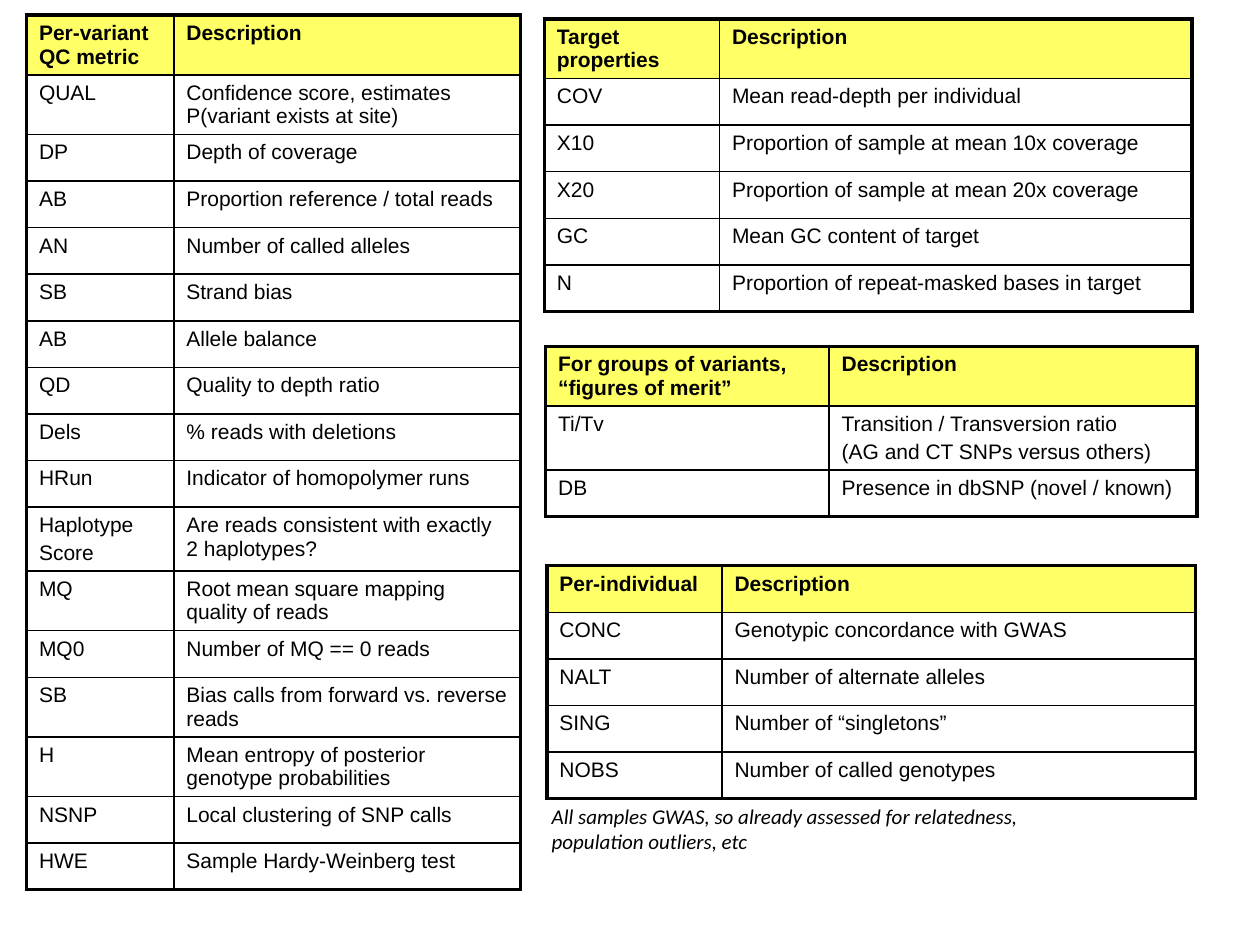
from dataclasses import dataclass

import pptx
import pptx.dml.color
import pptx.enum.text
import pptx.oxml.ns
import pptx.util
from lxml import etree

PX = 9144  # EMU per px, 100 px to the inch
ROW_HEIGHT = 37


@dataclass(frozen=True)
class Theme:
    ink: str = "000000"
    header_fill: str = "FFFF66"
    table_font: str = "Arial"
    note_font: str = "Calibri"
    size: float = 12
    paragraph_gap: float = 2.4
    outer_line: float = 2.25
    inner_line: float = 1


def write_text(frame, text, *, font, size, color, bold=False, italic=False, gap=0):
    """Write one paragraph per line of text, with a gap between paragraphs."""
    for index, line in enumerate(text.split("\n")):
        paragraph = frame.add_paragraph() if index else frame.paragraphs[0]
        paragraph.alignment = pptx.enum.text.PP_ALIGN.LEFT
        paragraph.space_before = pptx.util.Pt(gap if index else 0)
        run = paragraph.add_run()
        run.text = line
        run.font.name = font
        run.font.size = pptx.util.Pt(size)
        run.font.bold = bold
        run.font.italic = italic
        run.font.color.rgb = pptx.dml.color.RGBColor.from_string(color)


def set_border(cell, side, width, color):
    properties = cell._tc.get_or_add_tcPr()
    qn = pptx.oxml.ns.qn
    line = etree.SubElement(properties, qn(f"a:ln{side}"), w=str(pptx.util.Pt(width)))
    fill = etree.SubElement(line, qn("a:solidFill"))
    etree.SubElement(fill, qn("a:srgbClr"), val=color)


class SlideBuilder:
    def __init__(self, slide, theme):
        self.slide = slide
        self.theme = theme

    def table(self, left, top, column_widths, rows):
        """Add a two-column table whose first row is the header."""
        box = (left, top, sum(column_widths), ROW_HEIGHT * len(rows))
        shape = self.slide.shapes.add_table(
            len(rows), len(column_widths), *(value * PX for value in box))
        table = shape.table
        table.horz_banding = False
        for column, width in zip(table.columns, column_widths):
            column.width = width * PX
        for row in table.rows:
            row.height = ROW_HEIGHT * PX
        last_row, last_column = len(rows) - 1, len(column_widths) - 1
        for r, row in enumerate(rows):
            for c, text in enumerate(row):
                outer = {"L": c == 0, "R": c == last_column,
                         "T": r == 0, "B": r == last_row}
                self.cell(table.cell(r, c), text, outer, header=r == 0)

    def cell(self, cell, text, outer, header):
        theme = self.theme
        for side, is_outer in outer.items():
            width = theme.outer_line if is_outer else theme.inner_line
            set_border(cell, side, width, theme.ink)
        if header:
            cell.fill.solid()
            cell.fill.fore_color.rgb = pptx.dml.color.RGBColor.from_string(theme.header_fill)
        else:
            cell.fill.background()
        write_text(cell.text_frame, text, font=theme.table_font, size=theme.size,
                   color=theme.ink, bold=header, gap=theme.paragraph_gap)

    def note(self, left, top, width, height, text):
        box = (left, top, width, height)
        shape = self.slide.shapes.add_textbox(*(value * PX for value in box))
        frame = shape.text_frame
        frame.word_wrap = True
        frame.auto_size = pptx.enum.text.MSO_AUTO_SIZE.SHAPE_TO_FIT_TEXT
        write_text(frame, text, font=self.theme.note_font, size=self.theme.size,
                   color=self.theme.ink, italic=True)


VARIANT_METRICS = [
    ("Per-variant QC metric", "Description"),
    ("QUAL", "Confidence score, estimates P(variant exists at site)"),
    ("DP", "Depth of coverage"),
    ("AB", "Proportion reference / total reads"),
    ("AN", "Number of called alleles"),
    ("SB", "Strand bias"),
    ("AB", "Allele balance"),
    ("QD", "Quality to depth ratio"),
    ("Dels", "% reads with deletions"),
    ("HRun", "Indicator of homopolymer runs"),
    ("Haplotype\nScore", "Are reads consistent with exactly 2 haplotypes?"),
    ("MQ", "Root mean square mapping quality of reads"),
    ("MQ0", "Number of MQ == 0 reads"),
    ("SB", "Bias calls from forward vs. reverse reads"),
    ("H", "Mean entropy of posterior genotype probabilities"),
    ("NSNP", "Local clustering of SNP calls"),
    ("HWE", "Sample Hardy-Weinberg test"),
]
TARGET_PROPERTIES = [
    ("Target properties", "Description"),
    ("COV", "Mean read-depth per individual"),
    ("X10", "Proportion of sample at mean 10x coverage"),
    ("X20", "Proportion of sample at mean 20x coverage"),
    ("GC", "Mean GC content of target"),
    ("N", "Proportion of repeat-masked bases in target"),
]
INDIVIDUAL_METRICS = [
    ("Per-individual", "Description"),
    ("CONC", "Genotypic concordance with GWAS"),
    ("NALT", "Number of alternate alleles"),
    ("SING", "Number of “singletons”"),
    ("NOBS", "Number of called genotypes"),
]
GROUP_METRICS = [
    ("For groups of variants, “figures of merit”", "Description"),
    ("Ti/Tv", "Transition / Transversion ratio\n(AG and CT SNPs versus others)"),
    ("DB", "Presence in dbSNP (novel / known)"),
]


def main():
    presentation = pptx.Presentation()
    presentation.slide_width = 1000 * PX
    presentation.slide_height = 750 * PX
    blank_layout = presentation.slide_layouts[6]
    builder = SlideBuilder(presentation.slides.add_slide(blank_layout), Theme())
    builder.table(21, 12, (117, 275), VARIANT_METRICS)
    builder.table(432, 15, (139, 375), TARGET_PROPERTIES)
    builder.table(434, 449, (139, 376), INDIVIDUAL_METRICS)
    builder.table(433, 275, (225, 292), GROUP_METRICS)
    builder.note(428, 633, 468, 50,
                 "All samples GWAS, so already assessed for relatedness,\n"
                 "population outliers, etc")
    presentation.save("out.pptx")


if __name__ == "__main__":
    main()
